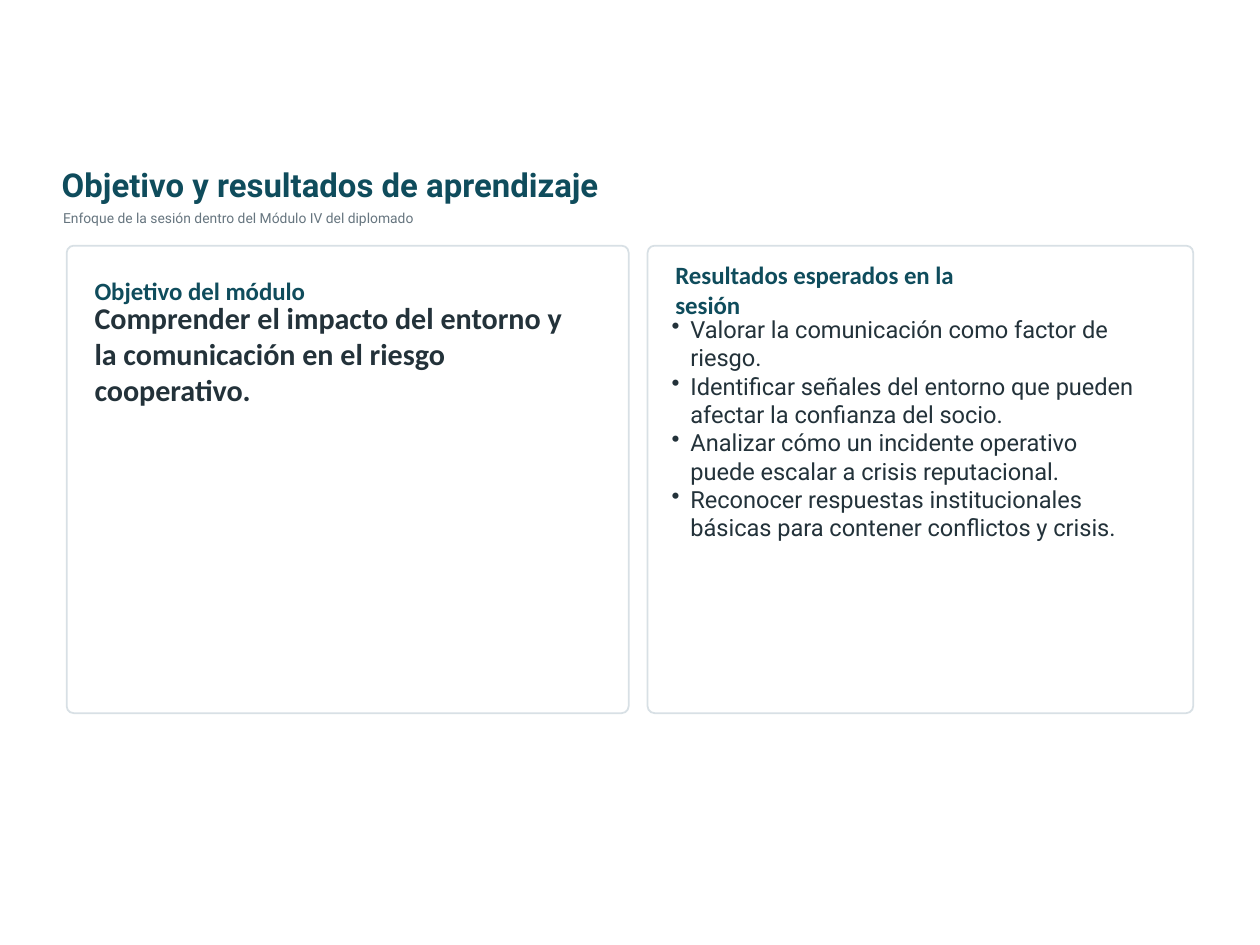
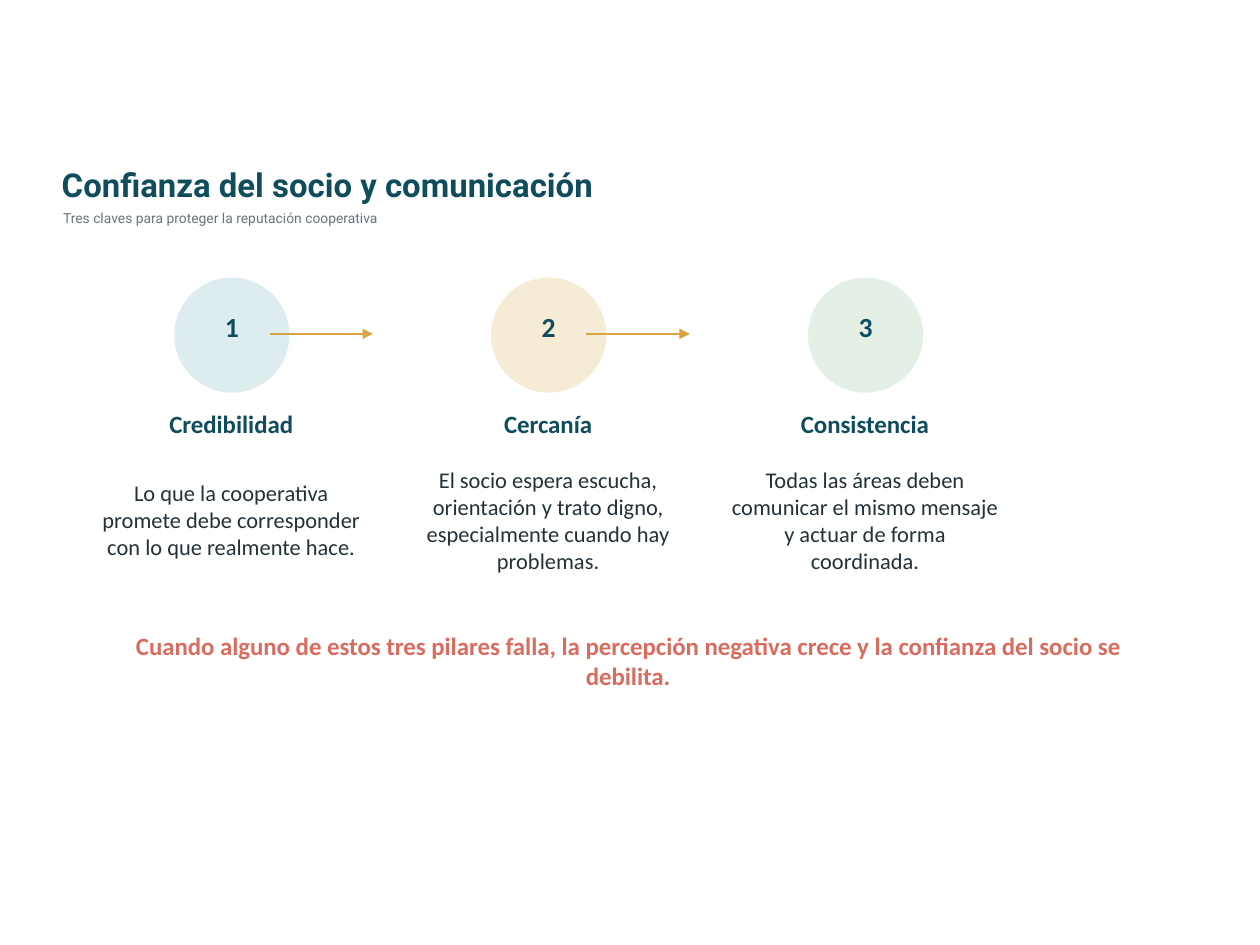
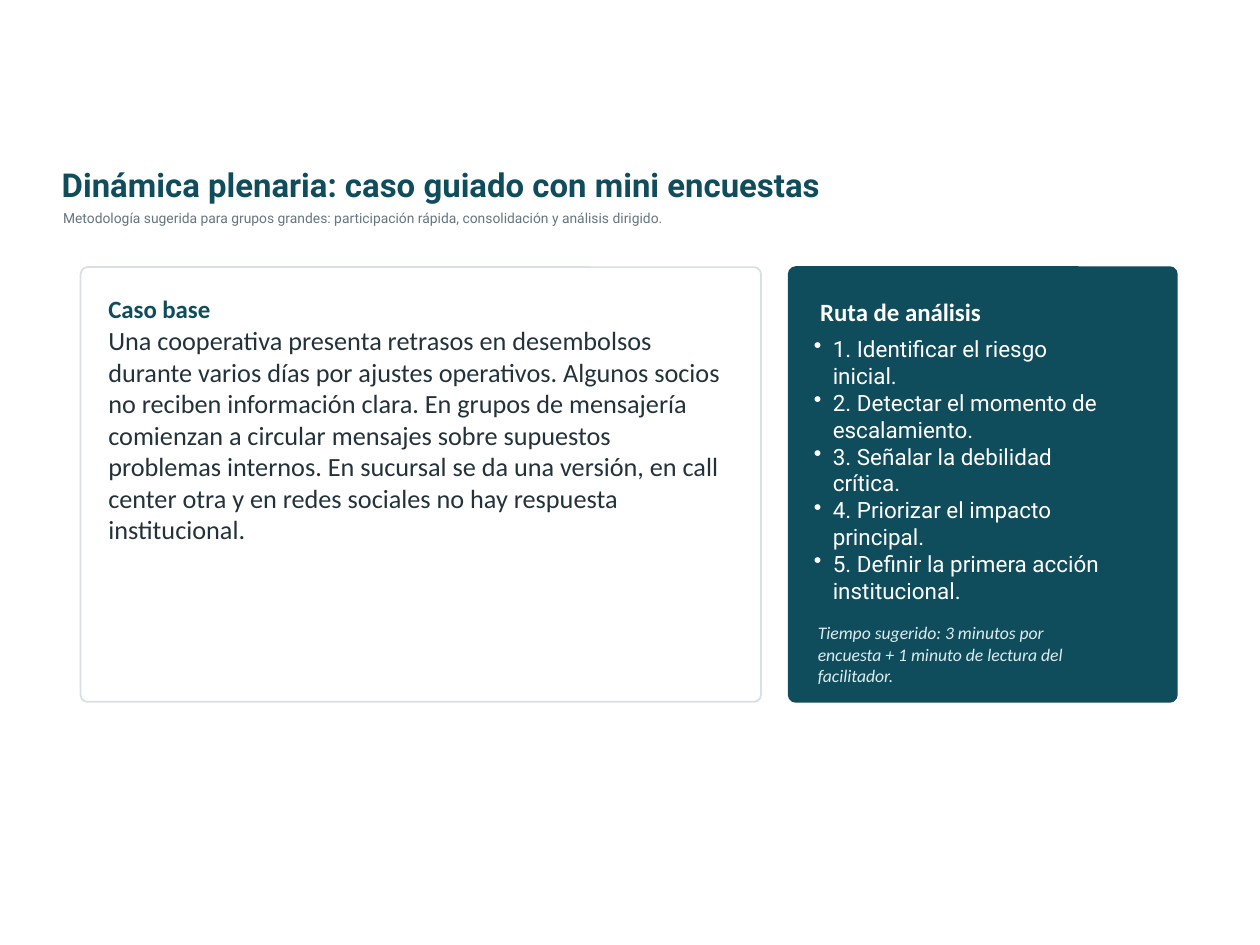
from dataclasses import dataclass
from typing import NamedTuple

import pptx
import pptx.dml.color
import pptx.enum.shapes
import pptx.enum.text
import pptx.oxml.ns
import pptx.util
from lxml import etree
from pptx.shapes.autoshape import Shape
from pptx.slide import Slide

COLORS = {
    "petrol": "0F4C5C",
    "ink": "23323A",
    "grey": "66757F",
    "border": "D8E0E5",
    "white": "FFFFFF",
    "mist": "DDECEE",
    "sand": "F6ECD5",
    "mint": "E4F0E5",
    "gold": "D9A441",
    "coral": "D96C5F",
}

SLIDE_WIDTH = pptx.util.Inches(10)
SLIDE_HEIGHT = pptx.util.Inches(7.5)
COLUMNS, ROWS = 100, 75
CORNER_RADIUS = 0.55
BULLET_INDENT = 1.5
PILLAR_PITCH = 25.15

ALIGN = pptx.enum.text.PP_ALIGN
ANCHOR = pptx.enum.text.MSO_ANCHOR
PRESET = pptx.enum.shapes.MSO_SHAPE


class Box(NamedTuple):
    """An area of the slide, in grid columns and rows."""
    col: float
    row: float
    cols: float
    rows: float


@dataclass(frozen=True)
class Style:
    size: float
    color: str
    font: str = "Calibri"
    bold: bool = False
    italic: bool = False
    align: ALIGN = ALIGN.LEFT


@dataclass(frozen=True)
class Pillar:
    name: str
    description: str
    color: str


TITLE = Style(18.8, "petrol", "Roboto", bold=True)
SUBTITLE = Style(7.9, "grey", "Roboto")
HEADING = Style(14.2, "petrol", bold=True)
LIGHT_HEADING = Style(14.2, "white", bold=True)
OBJECTIVE = Style(17.2, "ink", bold=True)
OUTCOME = Style(13.5, "ink", "Roboto")
CASE = Style(15, "ink")
STEP = Style(12.8, "white", "Roboto")
TIMING = Style(10.1, "mist", italic=True)
PILLAR_NUMBER = Style(15.8, "petrol", bold=True, align=ALIGN.CENTER)
PILLAR_NAME = Style(14.2, "petrol", bold=True, align=ALIGN.CENTER)
PILLAR_TEXT = Style(12.8, "ink", align=ALIGN.CENTER)
WARNING = Style(14.2, "coral", bold=True, align=ALIGN.CENTER)

OUTCOMES = [
    "Valorar la comunicación como factor de riesgo.",
    "Identificar señales del entorno que pueden afectar la confianza del socio.",
    "Analizar cómo un incidente operativo puede escalar a crisis reputacional.",
    "Reconocer respuestas institucionales básicas para contener conflictos y crisis.",
]

PILLARS = [
    Pillar("Credibilidad",
           "Lo que la cooperativa promete debe corresponder con lo que realmente hace.",
           "mist"),
    Pillar("Cercanía",
           "El socio espera escucha, orientación y trato digno, "
           "especialmente cuando hay problemas.",
           "sand"),
    Pillar("Consistencia",
           "Todas las áreas deben comunicar el mismo mensaje y actuar de forma coordinada.",
           "mint"),
]

CASE_STORY = (
    "Una cooperativa presenta retrasos en desembolsos durante varios días por ajustes "
    "operativos. Algunos socios no reciben información clara. En grupos de mensajería "
    "comienzan a circular mensajes sobre supuestos problemas internos. En sucursal se da "
    "una versión, en call center otra y en redes sociales no hay respuesta institucional."
)

ANALYSIS_STEPS = [
    "Identificar el riesgo inicial.",
    "Detectar el momento de escalamiento.",
    "Señalar la debilidad crítica.",
    "Priorizar el impacto principal.",
    "Definir la primera acción institucional.",
]


def x(cols: float) -> int:
    return round(SLIDE_WIDTH * cols / COLUMNS)


def y(rows: float) -> int:
    return round(SLIDE_HEIGHT * rows / ROWS)


def rgb(color: str) -> pptx.dml.color.RGBColor:
    return pptx.dml.color.RGBColor.from_string(COLORS[color])


def add_bullet(paragraph) -> None:
    properties = paragraph._p.get_or_add_pPr()
    properties.set("marL", str(x(BULLET_INDENT)))
    properties.set("indent", str(-x(BULLET_INDENT)))
    bullet = etree.SubElement(properties, pptx.oxml.ns.qn("a:buChar"))
    bullet.set("char", "•")


def add_text(slide: Slide, box: Box, text: str, style: Style,
             bulleted: bool = False) -> None:
    """Write text in a box; each line of a bulleted text becomes a list item."""
    frame = slide.shapes.add_textbox(
        x(box.col), y(box.row), x(box.cols), y(box.rows)).text_frame
    frame.word_wrap = True
    frame.margin_left = frame.margin_right = frame.margin_top = frame.margin_bottom = 0
    frame.vertical_anchor = ANCHOR.TOP if bulleted else ANCHOR.MIDDLE
    frame.text = text
    for paragraph in frame.paragraphs:
        paragraph.alignment = style.align
        if bulleted:
            add_bullet(paragraph)
        for run in paragraph.runs:
            run.font.name = style.font
            run.font.size = pptx.util.Pt(style.size)
            run.font.bold = style.bold
            run.font.italic = style.italic
            run.font.color.rgb = rgb(style.color)


def add_filled(slide: Slide, preset: PRESET, box: Box, fill: str, border: str) -> Shape:
    shape = slide.shapes.add_shape(
        preset, x(box.col), y(box.row), x(box.cols), y(box.rows))
    shape.shadow.inherit = False
    shape.fill.solid()
    shape.fill.fore_color.rgb = rgb(fill)
    shape.line.color.rgb = rgb(border)
    shape.line.width = pptx.util.Pt(1)
    return shape


def add_card(slide: Slide, box: Box, fill: str = "white", border: str = "border") -> None:
    card = add_filled(slide, PRESET.ROUNDED_RECTANGLE, box, fill, border)
    card.adjustments[0] = CORNER_RADIUS / min(box.cols, box.rows)


def add_arrow(slide: Slide, start: float, end: float, row: float) -> None:
    arrow = slide.shapes.add_connector(
        pptx.enum.shapes.MSO_CONNECTOR.STRAIGHT, x(start), y(row), x(end), y(row))
    arrow.line.color.rgb = rgb("gold")
    arrow.line.width = pptx.util.Pt(1)
    head = etree.SubElement(arrow.line._get_or_add_ln(), pptx.oxml.ns.qn("a:tailEnd"))
    head.set("type", "triangle")
    etree.SubElement(arrow._element.spPr, pptx.oxml.ns.qn("a:effectLst"))


def add_titled_slide(deck, title: str, subtitle: str) -> Slide:
    slide = deck.slides.add_slide(deck.slide_layouts[6])
    add_text(slide, Box(4.9, 13, 66.7, 3.2), title, TITLE)
    add_text(slide, Box(5, 16.4, 63.8, 1.8), subtitle, SUBTITLE)
    return slide


def build_objectives(deck) -> None:
    slide = add_titled_slide(deck, "Objetivo y resultados de aprendizaje",
                             "Enfoque de la sesión dentro del Módulo IV del diplomado")
    add_card(slide, Box(5.3, 19.5, 44.6, 37.1))
    add_card(slide, Box(51.4, 19.5, 43.3, 37.1))
    add_text(slide, Box(7.5, 21.9, 18.8, 2.3), "Objetivo del módulo", HEADING)
    add_text(slide, Box(7.5, 25, 37.5, 6.1),
             "Comprender el impacto del entorno y la comunicación en el riesgo cooperativo.",
             OBJECTIVE)
    add_text(slide, Box(53.6, 21.9, 26.2, 2.1),
             "Resultados esperados en la sesión", HEADING)
    add_text(slide, Box(53.3, 25, 37.1, 27.7), "\n".join(OUTCOMES), OUTCOME, bulleted=True)


def build_pillars(deck) -> None:
    slide = add_titled_slide(deck, "Confianza del socio y comunicación",
                             "Tres claves para proteger la reputación cooperativa")
    pillar_cols = [7.5 + PILLAR_PITCH * index for index in range(len(PILLARS))]
    for number, (col, pillar) in enumerate(zip(pillar_cols, PILLARS), start=1):
        add_filled(slide, PRESET.OVAL, Box(col + 6.4, 22.1, 9, 9),
                   pillar.color, pillar.color)
        add_text(slide, Box(col + 9.2, 25.1, 3.4, 1.7), str(number), PILLAR_NUMBER)
        add_text(slide, Box(col, 32.6, 21.7, 2.1), pillar.name, PILLAR_NAME)
        add_text(slide, Box(col, 36, 21.7, 10.5), pillar.description, PILLAR_TEXT)
    for col in pillar_cols[:-1]:
        add_arrow(slide, col + 13.9, col + 22.1, 26.5)
    add_text(slide, Box(10.1, 51, 79.5, 2.8),
             "Cuando alguno de estos tres pilares falla, la percepción negativa crece "
             "y la confianza del socio se debilita.", WARNING)


def build_case(deck) -> None:
    slide = add_titled_slide(
        deck, "Dinámica plenaria: caso guiado con mini encuestas",
        "Metodología sugerida para grupos grandes: participación rápida, "
        "consolidación y análisis dirigido.")
    add_card(slide, Box(6.4, 21.2, 54, 34.5))
    add_text(slide, Box(8.6, 23.6, 11.2, 1.8), "Caso base", HEADING)
    add_text(slide, Box(8.6, 26.8, 49.1, 15.4), CASE_STORY, CASE)

    add_card(slide, Box(62.6, 21.2, 30.8, 34.5), "petrol", "petrol")
    add_text(slide, Box(65.1, 23.8, 19.5, 1.8), "Ruta de análisis", LIGHT_HEADING)
    numbered_steps = [f"{number}. {step}"
                      for number, step in enumerate(ANALYSIS_STEPS, start=1)]
    add_text(slide, Box(64.6, 26.6, 23.3, 19.5), "\n".join(numbered_steps), STEP,
             bulleted=True)
    add_text(slide, Box(64.9, 50.3, 22.5, 3.2),
             "Tiempo sugerido: 3 minutos por encuesta + 1 minuto de lectura "
             "del facilitador.", TIMING)


def main() -> None:
    deck = pptx.Presentation()
    deck.slide_width = SLIDE_WIDTH
    deck.slide_height = SLIDE_HEIGHT
    build_objectives(deck)
    build_pillars(deck)
    build_case(deck)
    deck.save("out.pptx")


if __name__ == "__main__":
    main()
